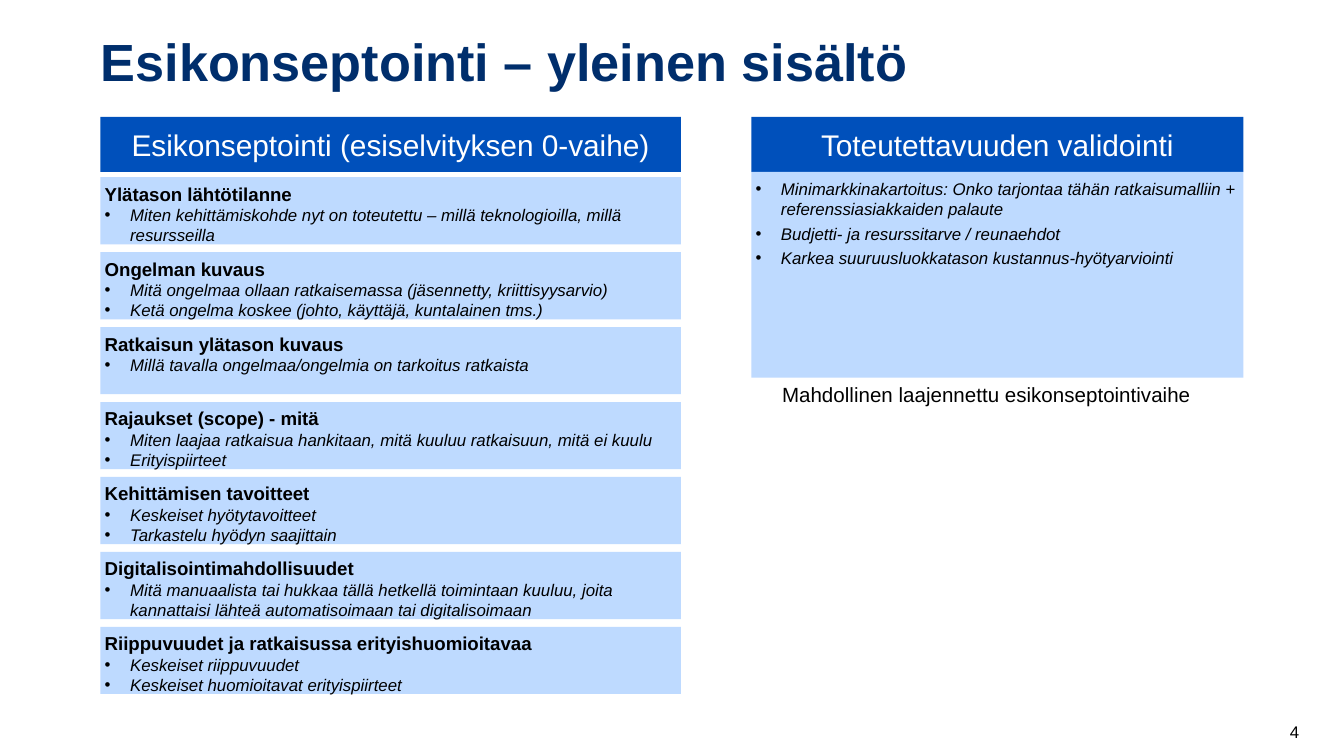
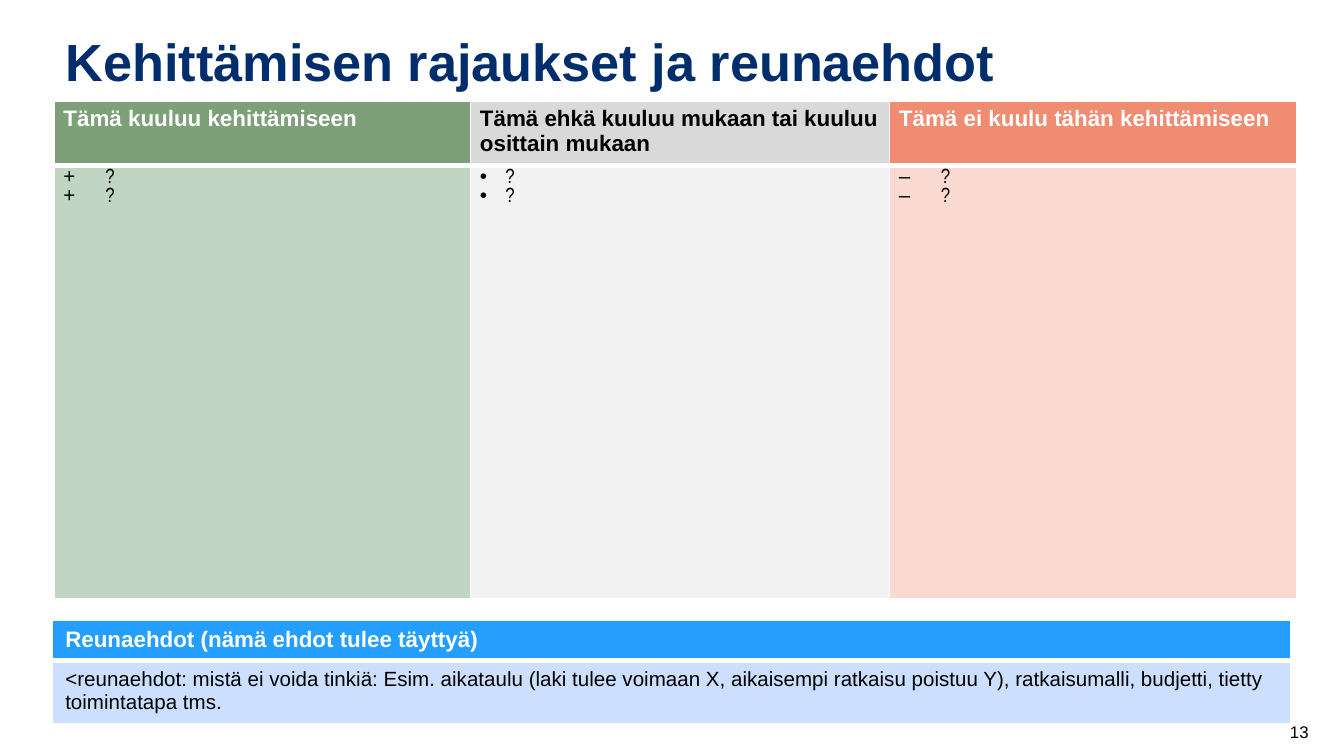
from lxml import etree
from pptx import Presentation, util as u
from pptx.dml.color import RGBColor
from pptx.enum import shapes, text
from pptx.oxml import ns

NAVY = RGBColor(0x00, 0x2E, 0x6C)
BLUE = RGBColor(0x00, 0x50, 0xBB)
PALE_BLUE = RGBColor(0xBE, 0xDA, 0xFF)
SKY = RGBColor(0x24, 0x9F, 0xFF)
PALE_SKY = RGBColor(0xCD, 0xDF, 0xFF)
GREEN = RGBColor(0x7D, 0xA0, 0x78)
PALE_GREEN = RGBColor(0xC1, 0xD5, 0xC3)
GREY = RGBColor(0xD9, 0xD9, 0xD9)
PALE_GREY = RGBColor(0xF2, 0xF2, 0xF2)
CORAL = RGBColor(0xEF, 0x8C, 0x71)
PALE_CORAL = RGBColor(0xFA, 0xD9, 0xD0)
BLACK = RGBColor(0, 0, 0)
WHITE = RGBColor(255, 255, 255)

FONT = "Arial"
TITLE = {"size": u.Pt(28), "bold": True}
BAND = {"size": u.Pt(16)}
HEADING = {"size": u.Pt(10), "bold": True}
DETAIL = {"size": u.Pt(9), "bold": False, "italic": True}
CAPTION = {"size": u.Pt(11)}
PAGE = {"size": u.Pt(9)}
TABLE_HEAD = {"size": u.Pt(12), "bold": True}
TABLE_BODY = {"size": u.Pt(11), "bold": False}
TABLE_ITEM = {**TABLE_BODY, "name": "Arial Narrow"}

LEFT, LEFT_WIDTH = 1.9, 10.97
RIGHT, RIGHT_WIDTH = 14.2, 9.3
BAND_TOP, BAND_HEIGHT = 2.21, 1.04
TOPIC_FIRST, TOPIC_LAST, TOPIC_HEIGHT = 3.35, 11.85, 1.27

TOPICS = [
    ("Ylätason lähtötilanne",
     ["Miten kehittämiskohde nyt on toteutettu – millä teknologioilla, millä resursseilla"]),
    ("Ongelman kuvaus",
     ["Mitä ongelmaa ollaan ratkaisemassa (jäsennetty, kriittisyysarvio)",
      "Ketä ongelma koskee (johto, käyttäjä, kuntalainen tms.)"]),
    ("Ratkaisun ylätason kuvaus",
     ["Millä tavalla ongelmaa/ongelmia on tarkoitus ratkaista"]),
    ("Rajaukset (scope) - mitä",
     ["Miten laajaa ratkaisua hankitaan, mitä kuuluu ratkaisuun, mitä ei kuulu",
      "Erityispiirteet"]),
    ("Kehittämisen tavoitteet",
     ["Keskeiset hyötytavoitteet", "Tarkastelu hyödyn saajittain"]),
    ("Digitalisointimahdollisuudet",
     ["Mitä manuaalista tai hukkaa tällä hetkellä toimintaan kuuluu, joita "
      "kannattaisi lähteä automatisoimaan tai digitalisoimaan"]),
    ("Riippuvuudet ja ratkaisussa erityishuomioitavaa",
     ["Keskeiset riippuvuudet", "Keskeiset huomioitavat erityispiirteet"]),
]
VALIDATION = [
    "Minimarkkinakartoitus: Onko tarjontaa tähän ratkaisumalliin + referenssiasiakkaiden palaute",
    "Budjetti- ja resurssitarve / reunaehdot",
    "Karkea suuruusluokkatason kustannus-hyötyarviointi",
]
SCOPE = [
    ("Tämä kuuluu kehittämiseen", WHITE, GREEN, PALE_GREEN, "+", 0.79),
    ("Tämä ehkä kuuluu mukaan tai kuuluu osittain mukaan", BLACK, GREY, PALE_GREY, "•", 0.48),
    ("Tämä ei kuulu tähän kehittämiseen", WHITE, CORAL, PALE_CORAL, "–", 0.79),
]


def set_values(target, values):
    for name, value in values.items():
        setattr(target, name, value)


def set_margins(target, side, top):
    set_values(target, {"margin_left": u.Cm(side), "margin_right": u.Cm(side),
                        "margin_top": u.Cm(top), "margin_bottom": u.Cm(top)})


def box(left, top, width, height):
    return [u.Cm(n) for n in (left, top, width, height)]


def write(tf, content, font, color=BLACK, **layout):
    p = tf.paragraphs[0]
    if p.runs:
        p = tf.add_paragraph()
    set_values(p, layout)
    r = p.add_run()
    r.text = content
    set_values(r.font, {"name": FONT, **font})
    r.font.color.rgb = color
    return p


def write_bullets(tf, items, font, mark="•", indent=0.48, **layout):
    for item in items:
        pPr = write(tf, item, font, **layout)._p.get_or_add_pPr()
        pPr.set("marL", str(u.Cm(indent)))
        pPr.set("indent", str(-u.Cm(indent)))
        etree.SubElement(pPr, ns.qn("a:buFont")).set("typeface", FONT)
        etree.SubElement(pPr, ns.qn("a:buChar")).set("char", mark)


def add_text(s, place, content, font, **frame):
    tf = s.shapes.add_textbox(*box(*place)).text_frame
    set_values(tf, {"word_wrap": True, **frame})
    write(tf, content, font)


def add_titled_slide(prs, title, place, number):
    s = prs.slides.add_slide(prs.slide_layouts[5])
    sp = s.shapes.title
    set_values(sp, dict(zip(("left", "top", "width", "height"), box(*place))))
    tf = sp.text_frame
    set_values(tf, {"vertical_anchor": text.MSO_ANCHOR.TOP, "word_wrap": True,
                    "auto_size": text.MSO_AUTO_SIZE.NONE, "margin_top": u.Cm(0.22)})
    write(tf, title, TITLE, NAVY, alignment=text.PP_ALIGN.LEFT)
    add_text(s, (24.13, 13.46, 1.14, 0.76), number, PAGE,
             vertical_anchor=text.MSO_ANCHOR.MIDDLE)
    return s


def add_panel(s, place, color, anchor=text.MSO_ANCHOR.TOP):
    sp = s.shapes.add_shape(shapes.MSO_SHAPE.RECTANGLE, *box(*place))
    sp.shadow.inherit = False
    sp.fill.solid()
    sp.fill.fore_color.rgb = color
    sp.line.fill.background()
    tf = sp.text_frame
    set_values(tf, {"word_wrap": True, "vertical_anchor": anchor})
    return tf


def add_band(s, left, width, title):
    tf = add_panel(s, (left, BAND_TOP, width, BAND_HEIGHT), BLUE, text.MSO_ANCHOR.MIDDLE)
    write(tf, title, BAND, WHITE, alignment=text.PP_ALIGN.CENTER)


def add_topic(s, top, heading, details):
    tf = add_panel(s, (LEFT, top, LEFT_WIDTH, TOPIC_HEIGHT), PALE_BLUE)
    set_margins(tf, 0.08, 0.1)
    write(tf, heading, HEADING, alignment=text.PP_ALIGN.LEFT)
    write_bullets(tf, details, DETAIL, alignment=text.PP_ALIGN.LEFT)


def add_grid(s, left, top, widths, heights):
    frame = s.shapes.add_table(len(heights), len(widths),
                               *box(left, top, sum(widths), sum(heights)))
    table = frame.table
    for column, width in zip(table.columns, widths):
        column.width = u.Cm(width)
    for row, height in zip(table.rows, heights):
        row.height = u.Cm(height)
    return table


def style_cell(cell, color, top_line, bottom_line):
    tcPr = cell._tc.get_or_add_tcPr()
    for side, points in (("L", 1), ("R", 1), ("T", top_line), ("B", bottom_line)):
        ln = etree.SubElement(tcPr, ns.qn("a:ln" + side), w=str(u.Pt(points)))
        fill = etree.SubElement(ln, ns.qn("a:solidFill"))
        etree.SubElement(fill, ns.qn("a:srgbClr"), val=str(WHITE))
    cell.fill.solid()
    cell.fill.fore_color.rgb = color


def style_column(table, index, head_color, body_color):
    head, body = table.cell(0, index), table.cell(1, index)
    style_cell(head, head_color, 1, 3)
    style_cell(body, body_color, 3, 1)
    return head, body


def build_concept_slide(prs):
    s = add_titled_slide(prs, "Esikonseptointi – yleinen sisältö",
                         (1.65, 0.33, 21.84, 1.88), "4")
    add_band(s, LEFT, LEFT_WIDTH, "Esikonseptointi (esiselvityksen 0-vaihe)")
    step = (TOPIC_LAST - TOPIC_FIRST) / (len(TOPICS) - 1)
    for i, (heading, details) in enumerate(TOPICS):
        add_topic(s, TOPIC_FIRST + i * step, heading, details)

    add_band(s, RIGHT, RIGHT_WIDTH, "Toteutettavuuden validointi")
    tf = add_panel(s, (RIGHT, BAND_TOP + BAND_HEIGHT, RIGHT_WIDTH, 3.89), PALE_BLUE)
    set_margins(tf, 0.08, 0.13)
    write_bullets(tf, VALIDATION, DETAIL, alignment=text.PP_ALIGN.LEFT,
                  space_after=u.Pt(2.2))
    add_text(s, (14.53, 7.09, 8.97, 0.74), "Mahdollinen laajennettu esikonseptointivaihe",
             CAPTION, auto_size=text.MSO_AUTO_SIZE.SHAPE_TO_FIT_TEXT)


def build_scope_slide(prs):
    s = add_titled_slide(prs, "Kehittämisen rajaukset ja reunaehdot",
                         (0.99, 0.33, 22.5, 1.63), "13")
    table = add_grid(s, 1.02, 1.91, (7.87, 7.92, 7.7), (1.07, 8.2))
    for i, (title, color, head_color, body_color, mark, indent) in enumerate(SCOPE):
        head, body = style_column(table, i, head_color, body_color)
        for cell in (head, body):
            set_margins(cell, 0.18, 0.1)
        write(head.text_frame, title, TABLE_HEAD, color)
        write_bullets(body.text_frame, ["?", "?"], TABLE_ITEM, mark, indent,
                      space_after=u.Pt(2), line_spacing=0.8)

    table = add_grid(s, 0.98, 11.73, (23.42,), (0.74, 1.14))
    head, body = style_column(table, 0, SKY, PALE_SKY)
    write(head.text_frame, "Reunaehdot (nämä ehdot tulee täyttyä)", TABLE_HEAD, WHITE)
    write(body.text_frame,
          "<reunaehdot: mistä ei voida tinkiä: Esim. aikataulu (laki tulee voimaan X, "
          "aikaisempi ratkaisu poistuu Y), ratkaisumalli, budjetti, tietty toimintatapa tms.",
          TABLE_BODY)


def main():
    prs = Presentation()
    prs.slide_width, prs.slide_height = u.Cm(25.4), u.Cm(14.29)
    build_concept_slide(prs)
    build_scope_slide(prs)
    prs.save("out.pptx")


if __name__ == "__main__":
    main()
